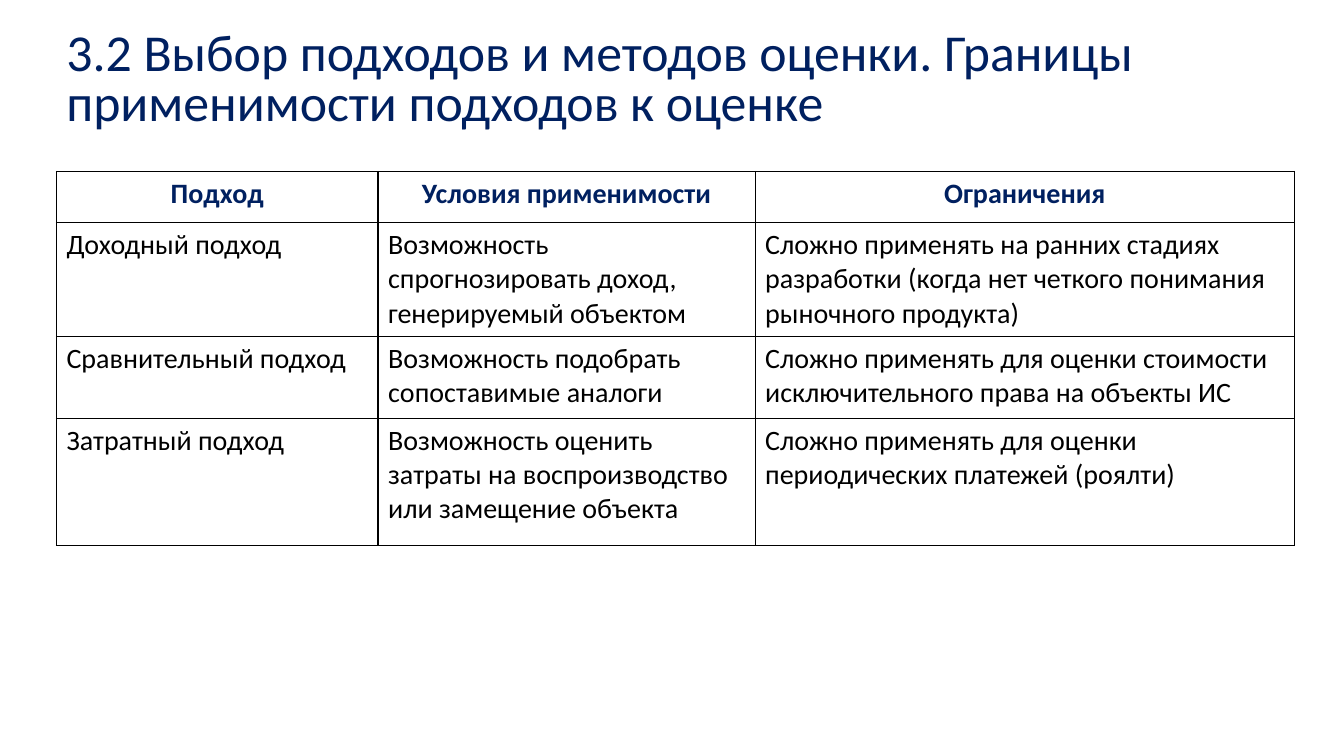
from lxml import etree
from pptx import Presentation
from pptx.dml.color import RGBColor
from pptx.enum import text
from pptx.oxml import ns
from pptx.util import Inches, Pt

COLORS = {"navy": "002060", "black": "000000"}
FONT = "Calibri"

TITLE = ("3.2 Выбор подходов и методов оценки. "
         "Границы применимости подходов к оценке")
COLUMN_WIDTHS = [3.19, 3.74, 5.35]
ROW_HEIGHTS = [0.51, 1.13, 0.81, 1.26]
APPROACHES = [
    ["Подход", "Условия применимости", "Ограничения"],
    ["Доходный подход",
     "Возможность спрогнозировать доход, генерируемый объектом",
     "Сложно применять на ранних стадиях разработки "
     "(когда нет четкого понимания рыночного продукта)"],
    ["Сравнительный подход",
     "Возможность подобрать сопоставимые аналоги",
     "Сложно применять для оценки стоимости "
     "исключительного права на объекты ИС"],
    ["Затратный подход",
     "Возможность оценить затраты на воспроизводство или замещение объекта",
     "Сложно применять для оценки периодических платежей (роялти)"],
]


def format_runs(paragraph, size, color, bold=False):
    for run in paragraph.runs:
        run.font.name = FONT
        run.font.size = Pt(size)
        run.font.bold = bold
        run.font.color.rgb = RGBColor.from_string(COLORS[color])


def add_borders(cell, color, width):
    """Draw a solid line on all four sides of a cell."""
    properties = cell._tc.get_or_add_tcPr()
    for position, side in enumerate(("lnL", "lnR", "lnT", "lnB")):
        line = etree.Element(ns.qn(f"a:{side}"), w=str(Pt(width)))
        fill = etree.SubElement(line, ns.qn("a:solidFill"))
        etree.SubElement(fill, ns.qn("a:srgbClr"), val=COLORS[color])
        properties.insert(position, line)


def add_title(slide, left, top, width, height):
    box = slide.shapes.add_textbox(
        Inches(left), Inches(top), Inches(width), Inches(height))
    frame = box.text_frame
    frame.word_wrap = True
    frame.vertical_anchor = text.MSO_ANCHOR.MIDDLE
    frame.text = TITLE
    paragraph = frame.paragraphs[0]
    paragraph.line_spacing = 0.8
    format_runs(paragraph, 37, "navy")


def add_approach_table(slide, left, top):
    table = slide.shapes.add_table(
        len(ROW_HEIGHTS), len(COLUMN_WIDTHS), Inches(left), Inches(top),
        Inches(sum(COLUMN_WIDTHS)), Inches(sum(ROW_HEIGHTS))).table
    table.first_row = False
    table.horz_banding = False
    for column, width in zip(table.columns, COLUMN_WIDTHS):
        column.width = Inches(width)

    for index, (row, height) in enumerate(zip(table.rows, ROW_HEIGHTS)):
        row.height = Inches(height)
        is_header = index == 0
        for cell, wording in zip(row.cells, APPROACHES[index]):
            cell.text_frame.text = wording
            cell.fill.background()
            add_borders(cell, "black", 1)
            paragraph = cell.text_frame.paragraphs[0]
            if is_header:
                paragraph.alignment = text.PP_ALIGN.CENTER
            format_runs(paragraph, 20, "navy" if is_header else "black", is_header)


def main():
    presentation = Presentation()
    presentation.slide_width = Inches(13.33)
    presentation.slide_height = Inches(7.5)
    slide = presentation.slides.add_slide(presentation.slide_layouts[6])

    # Heading
    add_title(slide, 0.56, 0.25, 12.28, 1.12)
    # Approaches, conditions and limits
    add_approach_table(slide, 0.56, 1.7)

    presentation.save("out.pptx")


if __name__ == "__main__":
    main()
